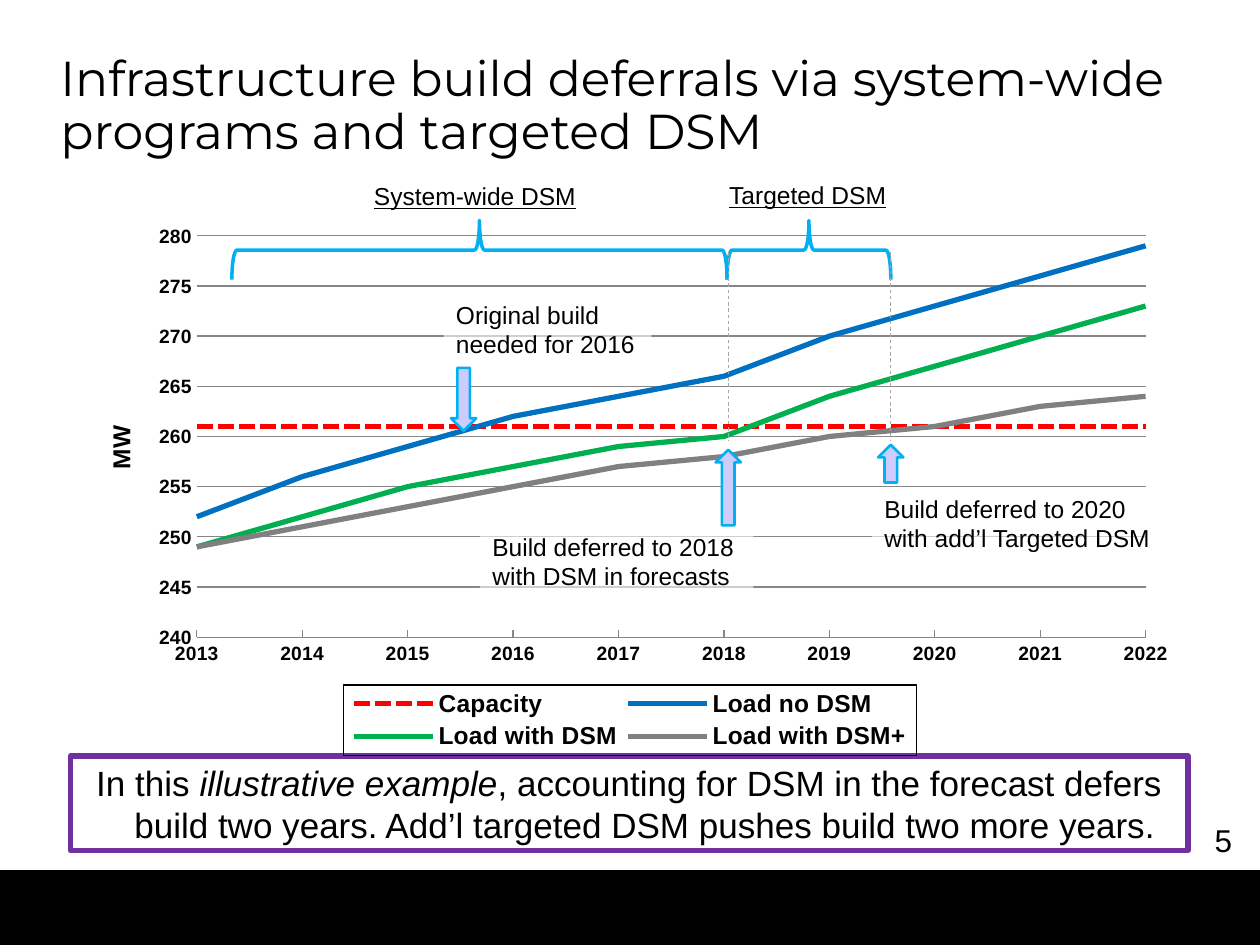
import pptx
import pptx.util
import pptx.chart.data
from lxml import etree
from pptx.dml.color import RGBColor
from pptx.enum.chart import XL_CHART_TYPE, XL_LEGEND_POSITION, XL_TICK_MARK
from pptx.enum.dml import MSO_LINE
from pptx.enum.shapes import MSO_CONNECTOR, MSO_SHAPE
from pptx.enum.text import MSO_ANCHOR, PP_ALIGN
from pptx.oxml import parse_xml
from pptx.oxml.ns import nsdecls, qn
from pptx.util import Inches, Pt

TITLE = "Infrastructure build deferrals via system-wide programs and targeted DSM"
TAKEAWAY = [
    ("In this ", False),
    ("illustrative example", True),
    (", accounting for DSM in the forecast defers build two years. "
     "Add’l targeted DSM pushes build two more years.", False),
]
YEARS = [str(year) for year in range(2013, 2023)]
SERIES = [  # name, colour, MW by year
    ("Capacity", "FF0000", [261] * len(YEARS)),
    ("Load no DSM", "0070C0", [252, 256, 259, 262, 264, 266, 270, 273, 276, 279]),
    ("Load with DSM", "00B050", [249, 252, 255, 257, 259, 260, 264, 267, 270, 273]),
    ("Load with DSM+", "808080", [249, 251, 253, 255, 257, 258, 260, 261, 263, 264]),
]
NOTES = [  # text, left, top, width, height
    ("Original build needed for 2016", 3.52, 2.33, 1.65, 0.57),
    ("Build deferred to 2018 with DSM in forecasts", 3.81, 4.17, 2.17, 0.57),
    ("Build deferred to 2020 with add’l Targeted DSM", 6.92, 3.87, 2.33, 0.63),
]
ARROWS = [  # shape, centre x, top, height
    (MSO_SHAPE.DOWN_ARROW, 3.68, 2.92, 0.5),
    (MSO_SHAPE.UP_ARROW, 5.78, 3.57, 0.6),
    (MSO_SHAPE.UP_ARROW, 7.07, 3.53, 0.3),
]
PHASES = [  # label, label left, label top, brace start, brace end
    ("System-wide DSM", 2.48, 1.39, 1.84, 5.77),
    ("Targeted DSM", 5.12, 1.38, 5.77, 7.07),
]
BUILD_DATES = [5.78, 7.07]
BRACE_TOP, BRACE_DEPTH = 1.75, 0.47
CHART = (0.56, 1.7, 8.87, 4.3)
PLOT = (1.56, 1.87, 7.53, 3.19)
LEGEND = (2.72, 5.44, 4.55, 0.56)
AXIS_TITLE = (0.8, 3.34)


def rgb(value):
    return RGBColor.from_string(value)


def set_font(font, size, color="000000", name="Arial", bold=None):
    font.size, font.name, font.bold = Pt(size), name, bold
    font.color.rgb = rgb(color)


def add_run(p, text, size, name="Arial"):
    r = p.add_run()
    r.text = text
    set_font(r.font, size, name=name)
    return r


def add_shape(s, kind, box, fill=None, line=None, width=1.0):
    sp = s.shapes.add_shape(kind, *map(Inches, box))
    sp.shadow.inherit = False
    if fill:
        sp.fill.solid()
        sp.fill.fore_color.rgb = rgb(fill)
    else:
        sp.fill.background()
    if line:
        sp.line.color.rgb = rgb(line)
        sp.line.width = Pt(width)
    else:
        sp.line.fill.background()
    return sp


def add_text(s, text, box, size, align=PP_ALIGN.CENTER):
    tf = s.shapes.add_textbox(*map(Inches, box)).text_frame
    tf.word_wrap = True
    tf.paragraphs[0].alignment = align
    return tf, add_run(tf.paragraphs[0], text, size)


def place(element, box, inner=False):
    """Fix a chart part at a slide position given in inches."""
    left, top, width, height = CHART
    parts = dict(zip("xywh", [(box[0] - left) / width, (box[1] - top) / height]
                     + [v / full for v, full in zip(box[2:], (width, height))]))
    target = '<c:layoutTarget val="inner"/>' if inner else ""
    modes = '<c:xMode val="edge"/><c:yMode val="edge"/>'
    values = "".join(f'<c:{k} val="{v:.3f}"/>' for k, v in parts.items())
    for old in element.findall(qn("c:layout")):
        element.remove(old)
    layout = parse_xml(f'<c:layout {nsdecls("c")}><c:manualLayout>{target}{modes}'
                       f'{values}</c:manualLayout></c:layout>')
    before = [c for c in element if c.tag in (qn("c:tx"), qn("c:legendPos"))]
    element.insert(len(before), layout)


def add_load_chart(s):
    data = pptx.chart.data.CategoryChartData()
    data.categories = YEARS
    for name, _, values in SERIES:
        data.add_series(name, values)
    chart = s.shapes.add_chart(XL_CHART_TYPE.LINE, *map(Inches, CHART), data).chart
    chart.has_title = False
    set_font(chart.font, 10)
    plot = chart.plots[0]
    plot.vary_by_categories = False
    for series, (_, color, _) in zip(plot.series, SERIES):
        series.smooth = False
        series.format.line.color.rgb = rgb(color)
        series.format.line.width = Pt(3)
    plot.series[0].format.line.dash_style = MSO_LINE.SQUARE_DOT

    years, load = chart.category_axis, chart.value_axis
    for axis, tick in ((years, XL_TICK_MARK.INSIDE), (load, XL_TICK_MARK.NONE)):
        axis.major_tick_mark, axis.minor_tick_mark = tick, XL_TICK_MARK.NONE
        set_font(axis.tick_labels.font, 11, bold=True)
    load.minimum_scale, load.maximum_scale, load.major_unit = 240, 280, 5
    load.has_major_gridlines = True
    load.format.line.fill.background()
    for line in (years.format.line, load.major_gridlines.format.line):
        line.color.rgb = rgb("868686")
        line.width = Pt(0.75)
    load._element.find(qn("c:majorUnit")).addprevious(
        parse_xml(f'<c:crossBetween {nsdecls("c")} val="midCat"/>'))
    r = load.axis_title.text_frame.paragraphs[0].add_run()
    r.text = "MW"
    set_font(r.font, 14, bold=True)

    chart.has_legend = True
    legend = chart.legend
    legend.position = XL_LEGEND_POSITION.BOTTOM
    legend.include_in_layout = False
    set_font(legend.font, 14, bold=True)
    border = parse_xml(f'<c:spPr {nsdecls("c", "a")}><a:ln w="9525"><a:solidFill>'
                       '<a:srgbClr val="000000"/></a:solidFill></a:ln></c:spPr>')
    legend._element.find(qn("c:txPr")).addprevious(border)
    place(chart._chartSpace.chart.plotArea, PLOT, inner=True)
    place(legend._element, LEGEND)
    place(load.axis_title._element, AXIS_TITLE)


def main():
    prs = pptx.Presentation()
    prs.slide_width, prs.slide_height = Inches(10), Inches(7.5)
    s = prs.slides.add_slide(prs.slide_layouts[5])

    add_shape(s, MSO_SHAPE.RECTANGLE, (0, 6.91, 10, 0.59), "000000", "000000", 0.75)
    tf, _ = add_text(s, "5", (9.42, 6.42, 0.58, 0.49), 18)
    tf.vertical_anchor = MSO_ANCHOR.MIDDLE

    title = s.shapes.title
    title.left, title.top, title.width, title.height = map(Inches, (0.38, 0.38, 9.25, 1.18))
    title.text_frame.vertical_anchor = MSO_ANCHOR.TOP
    p = title.text_frame.paragraphs[0]
    p.alignment, p.line_spacing = PP_ALIGN.LEFT, 0.9
    add_run(p, TITLE, 28, "Montserrat")

    sp = add_shape(s, MSO_SHAPE.RECTANGLE, (0.56, 6, 8.87, 0.75), line="7030A0", width=3)
    p = sp.text_frame.paragraphs[0]
    p.alignment = PP_ALIGN.CENTER
    pPr = p._p.get_or_add_pPr()
    pPr.set("marL", str(Inches(0.25)))
    pPr.set("indent", str(Inches(-0.25)))
    for text, italic in TAKEAWAY:
        add_run(p, text, 20).font.italic = italic

    add_load_chart(s)

    for text, *box in NOTES:
        sp = add_shape(s, MSO_SHAPE.RECTANGLE, box, "FFFFFF")
        color = sp._element.spPr.find(qn("a:solidFill"))[0]
        etree.SubElement(color, qn("a:alpha")).set("val", "60000")
        sp.text_frame.vertical_anchor = MSO_ANCHOR.TOP
        p = sp.text_frame.paragraphs[0]
        p.alignment = PP_ALIGN.LEFT
        add_run(p, text, 14)

    for label, left, top, start, end in PHASES:
        span, middle = end - start, (start + end) / 2
        box = (middle - BRACE_DEPTH / 2, BRACE_TOP + (BRACE_DEPTH - span) / 2,
               BRACE_DEPTH, span)
        add_shape(s, MSO_SHAPE.LEFT_BRACE, box, line="00B0F0", width=2).rotation = 90
        add_text(s, label, (left, top, 2.58, 0.34), 14)[1].font.underline = True

    for x in BUILD_DATES:
        line = s.shapes.add_connector(MSO_CONNECTOR.STRAIGHT,
                                      *map(Inches, (x, 2, x, 3.5)))
        line.line.color.rgb = rgb("A6A6A6")
        line.line.width = Pt(0.5)
        line.line.dash_style = MSO_LINE.DASH
        etree.SubElement(line._element.spPr, qn("a:effectLst"))

    for kind, x, top, height in ARROWS:
        add_shape(s, kind, (x - 0.1, top, 0.2, height), "CCCCFF", "00B0F0", 1.5)

    prs.save("out.pptx")


if __name__ == "__main__":
    main()
